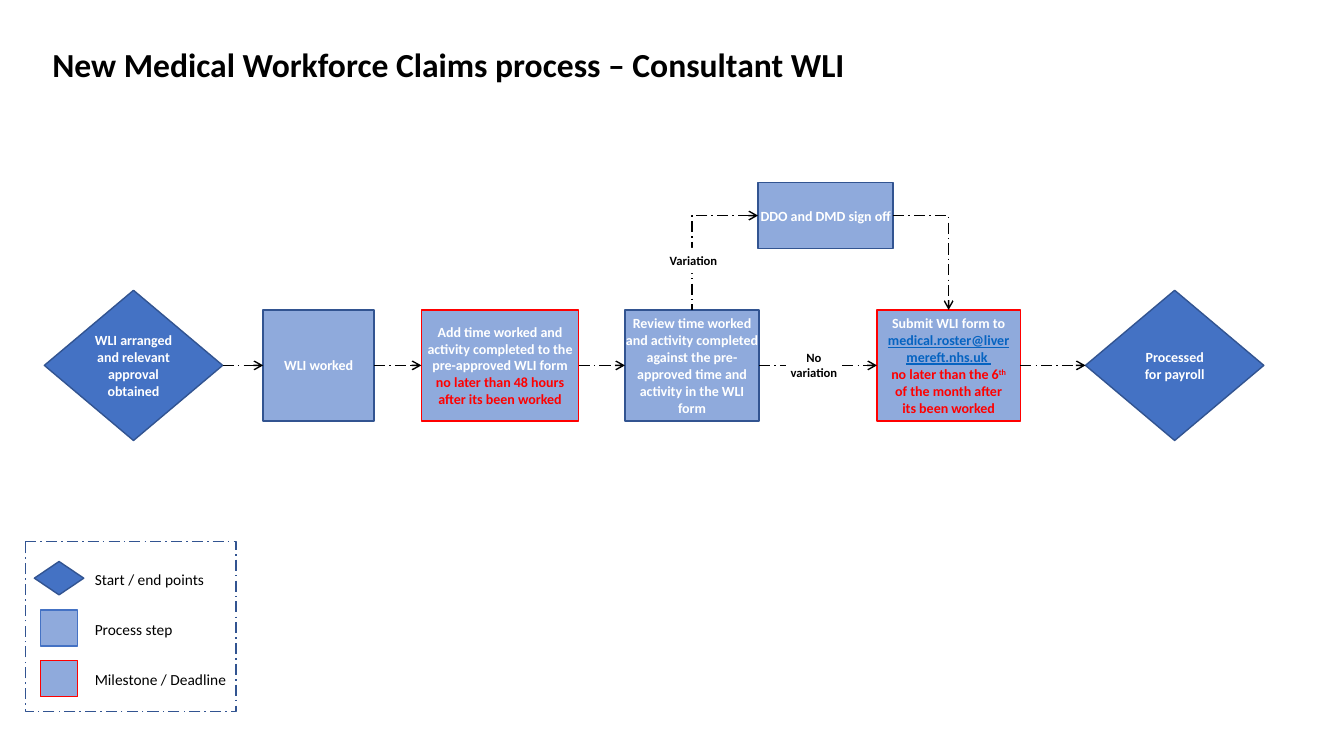
from lxml import etree
from pptx import Presentation
from pptx.dml.color import RGBColor
from pptx.enum import dml, shapes, text
from pptx.oxml import ns
from pptx.util import Pt

WHITE = RGBColor(0xFF, 0xFF, 0xFF)
BLACK = RGBColor(0, 0, 0)
RED = RGBColor(0xFF, 0, 0)
BLUE = RGBColor(0x44, 0x72, 0xC4)
PALE = RGBColor(0x8F, 0xAA, 0xDC)
EDGE = RGBColor(0x32, 0x54, 0x91)
LINK = RGBColor(0x05, 0x63, 0xC1)

KIND = shapes.MSO_SHAPE
PROCESS, DECISION = KIND.FLOWCHART_PROCESS, KIND.FLOWCHART_DECISION
LEFT, CENTER = text.PP_ALIGN.LEFT, text.PP_ALIGN.CENTER
TOP, MIDDLE = text.MSO_ANCHOR.TOP, text.MSO_ANCHOR.MIDDLE
DASH = dml.MSO_LINE.LONG_DASH_DOT

prs = Presentation()
prs.slide_width, prs.slide_height = Pt(960), Pt(540)
s = prs.slides.add_slide(prs.slide_layouts[5])


def write(tf, paragraphs, size, align, anchor, inset, bold=True):
    tf.word_wrap = True
    tf.auto_size = text.MSO_AUTO_SIZE.NONE
    tf.vertical_anchor = anchor
    tf.margin_left = tf.margin_right = Pt(inset)
    tf.margin_top = tf.margin_bottom = Pt(3.6)
    for i, runs in enumerate(paragraphs):
        p = tf.add_paragraph() if i else tf.paragraphs[0]
        p.alignment = align
        for words, color in runs:
            r = p.add_run()
            r.text = words
            r.font.name, r.font.size, r.font.bold = "Calibri", Pt(size), bold
            r.font.color.rgb = color
            if color == LINK:
                r.font.underline = True
            if words == "th":
                r._r.get_or_add_rPr().set("baseline", "30000")


def add_box(kind, x, y, w, h, fill, line):
    sp = s.shapes.add_shape(kind, Pt(x), Pt(y), Pt(w), Pt(h))
    sp.shadow.inherit = False
    if fill is None:
        sp.fill.background()
    else:
        sp.fill.solid()
        sp.fill.fore_color.rgb = fill
    if line is None:
        sp.line.fill.background()
    else:
        sp.line.color.rgb = line
        sp.line.width = Pt(1)
    return sp


title = s.shapes.title
title.left, title.top, title.width, title.height = Pt(30.2), Pt(28), Pt(775), Pt(64)
write(title.text_frame, [[("New Medical Workforce Claims process – Consultant WLI", BLACK)]],
      24, LEFT, TOP, 7.2)

ROW = 261
steps = {}
for name, kind, x, mid, w, h, fill, line, inset, paragraphs in [
    ("start", DECISION, 31.7, ROW, 127.4, 107.3, BLUE, EDGE, 2.9,
     [[("WLI arranged and relevant approval obtained", WHITE)]]),
    ("worked", PROCESS, 188, ROW, 79.2, 79.2, PALE, EDGE, 0, [[("WLI worked", WHITE)]]),
    ("add", PROCESS, 301, ROW, 112.3, 79.2, PALE, RED, 2.9,
     [[("Add time worked and activity completed to the pre-approved WLI form", WHITE)],
      [("no later than 48 hours after its been worked", RED)]]),
    ("review", PROCESS, 446.4, ROW, 95.8, 79.2, PALE, EDGE, 0,
     [[("Review time worked and activity completed against the pre- approved time "
        "and activity in the WLI form", WHITE)]]),
    ("sign off", PROCESS, 541.5, 154, 96.5, 47, PALE, EDGE, 0,
     [[("DDO and DMD sign off", WHITE)]]),
    ("submit", PROCESS, 626.4, ROW, 102.4, 79.2, PALE, RED, 7.2,
     [[("Submit WLI form to ", WHITE), ("medical.roster@livermereft.nhs.uk ", LINK)],
      [("no later than the 6", RED), ("th", RED),
       (" of the month after its been worked", RED)]]),
    ("end", KIND.DIAMOND, 775.4, ROW, 127.4, 107.3, BLUE, EDGE, 7.2,
     [[("Processed for payroll", WHITE)]]),
]:
    sp = add_box(kind, x, mid - h / 2, w, h, fill, line)
    write(sp.text_frame, paragraphs, 10, CENTER, MIDDLE, inset)
    steps[name] = sp

for source, source_side, target, target_side, arrow in [
    ("start", 3, "worked", 1, "tailEnd"),
    ("worked", 3, "add", 1, "tailEnd"),
    ("add", 3, "review", 1, "tailEnd"),
    ("review", 3, "submit", 1, "tailEnd"),
    ("submit", 3, "end", 1, "tailEnd"),
    ("sign off", 1, "review", 0, "headEnd"),
    ("sign off", 3, "submit", 0, "tailEnd"),
]:
    bent = target_side == 0
    kind = shapes.MSO_CONNECTOR.ELBOW if bent else shapes.MSO_CONNECTOR.STRAIGHT
    link = s.shapes.add_connector(kind, 0, 0, 0, 0)
    link.begin_connect(steps[source], source_side)
    link.end_connect(steps[target], target_side)
    link.line.color.rgb = BLACK
    link.line.width = Pt(1)
    link.line.dash_style = DASH
    props = link._element.spPr
    if bent:
        props.find(ns.qn("a:prstGeom")).set("prst", "bentConnector2")
    etree.SubElement(props.find(ns.qn("a:ln")), ns.qn("a:" + arrow), type="arrow")
    etree.SubElement(props, ns.qn("a:effectLst"))

for words, x, y, w, h in [("Variation", 457.2, 177.1, 76.3, 18),
                          ("No variation", 561.6, 246.2, 39.6, 28.8)]:
    sp = add_box(KIND.RECTANGLE, x, y, w, h, WHITE, None)
    write(sp.text_frame, [[(words, BLACK)]], 9, CENTER, TOP, 2.9)

panel = add_box(PROCESS, 18, 386.6, 150.5, 121.7, None, EDGE)
panel.line.dash_style = DASH
for words, y, kind, w, h, fill, line in [
    ("Start / end points", 413, DECISION, 35.3, 23.8, BLUE, EDGE),
    ("Process step", 448.6, PROCESS, 26.6, 25.9, PALE, BLUE),
    ("Milestone / Deadline", 484.6, PROCESS, 26.6, 25.9, PALE, RED),
]:
    add_box(kind, 42.2 - w / 2, y - h / 2, w, h, fill, line)
    sp = add_box(KIND.RECTANGLE, 64.8, y - 9.4, 102.2, 20.9, WHITE, None)
    write(sp.text_frame, [[(words, BLACK)]], 11, LEFT, TOP, 2.9, False)

prs.save("out.pptx")
